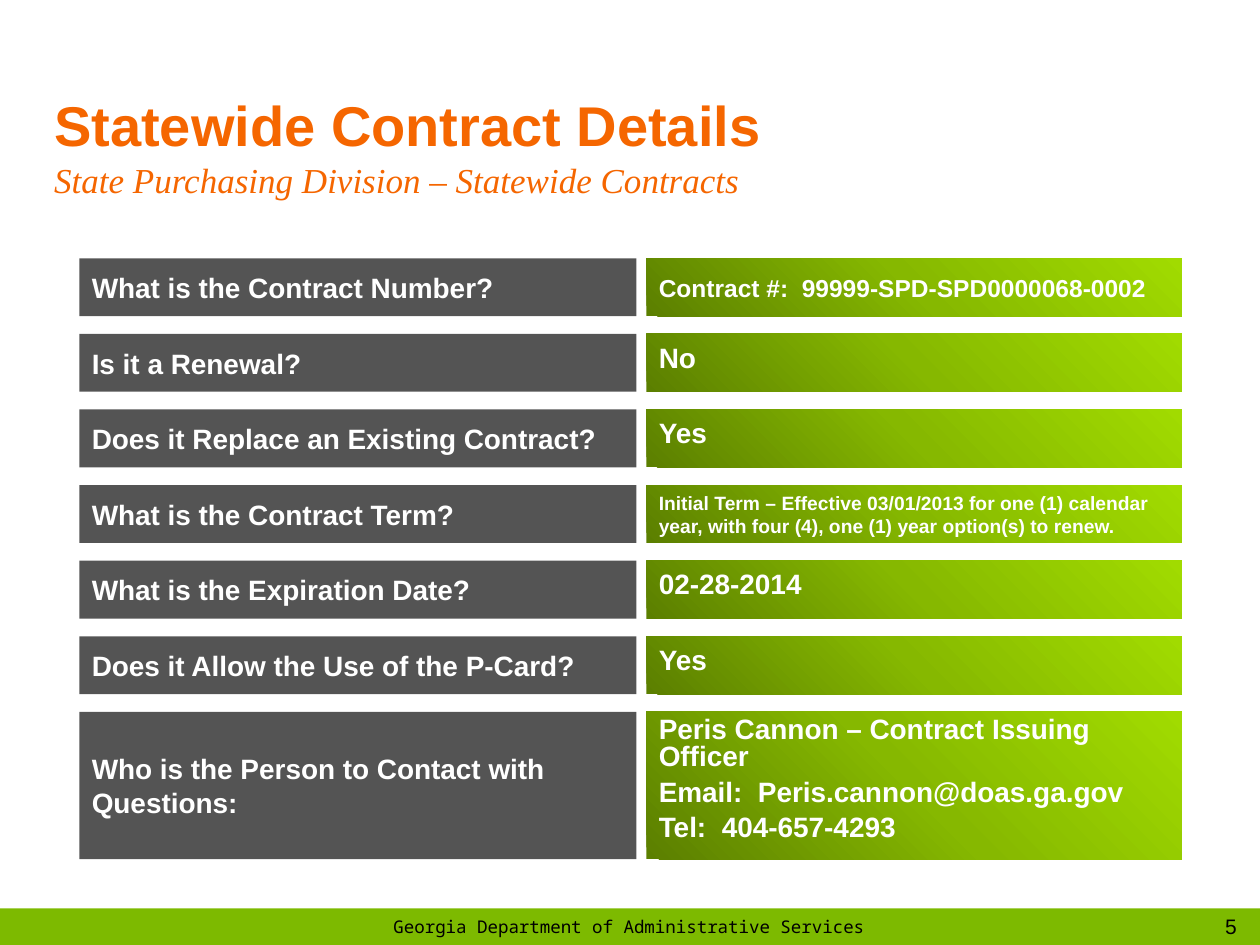
from lxml.etree import SubElement
from pptx import Presentation
from pptx.dml.color import RGBColor
from pptx.enum.shapes import MSO_SHAPE
from pptx.enum.text import MSO_ANCHOR, MSO_AUTO_SIZE, PP_ALIGN
from pptx.oxml import parse_xml
from pptx.oxml.ns import nsdecls, qn
from pptx.util import Inches, Pt

ORANGE = RGBColor(0xF5, 0x66, 0x00)
GREEN = RGBColor(0x7D, 0xBA, 0x00)
BLACK = RGBColor(0x00, 0x00, 0x00)
WHITE = RGBColor(0xFF, 0xFF, 0xFF)
GRADIENT = [(0, RGBColor(0x5B, 0x7F, 0x00)), (50, RGBColor(0x86, 0xB8, 0x00)),
            (100, RGBColor(0xA1, 0xDB, 0x00))]

TITLE = "Statewide Contract Details"
SUBTITLE = "State Purchasing Division – Statewide Contracts"
FOOTER = "Georgia Department of Administrative Services"
PAGE = "5"
DETAILS = [
    ("What is the Contract Number?", ["Contract #:  99999-SPD-SPD0000068-0002"],
     {"size": 14, "anchor": MSO_ANCHOR.MIDDLE}),
    ("Is it a Renewal?", ["No"], {}),
    ("Does it Replace an Existing Contract?", ["Yes"], {}),
    ("What is the Contract Term?",
     ["Initial Term – Effective 03/01/2013 for one (1) calendar year, "
      "with four (4), one (1) year option(s) to renew."], {"size": 11}),
    ("What is the Expiration Date?", ["02-28-2014"], {}),
    ("Does it Allow the Use of the P-Card?", ["Yes"], {}),
    ("Who is the Person to Contact with Questions:",
     ["Peris Cannon – Contract Issuing Officer",
      "Email:  Peris.cannon@doas.ga.gov", "Tel:  404-657-4293"],
     {"line_spacing": 0.8, "space_after": 5}),
]

QUESTION_LEFT, QUESTION_WIDTH = 0.63, 4.42
ANSWER_LEFT, ANSWER_WIDTH = 5.13, 4.25
FIRST_TOP, ROW_PITCH = 2.05, 0.6
ROW_HEIGHT, CONTACT_HEIGHT = 0.46, 1.17


def style_run(run, size, color, font="Arial", bold=False, italic=False):
    run.font.name = font
    run.font.size = Pt(size)
    run.font.bold = bold
    run.font.italic = italic
    run.font.color.rgb = color


def write_text(shape, lines, size=16, color=WHITE, font="Arial", bold=True,
               align=PP_ALIGN.LEFT, anchor=MSO_ANCHOR.TOP,
               line_spacing=None, space_after=None):
    frame = shape.text_frame
    frame.word_wrap = True
    frame.vertical_anchor = anchor
    for index, line in enumerate(lines):
        paragraph = frame.add_paragraph() if index else frame.paragraphs[0]
        paragraph.alignment = align
        if line_spacing:
            paragraph.line_spacing = line_spacing
        if space_after:
            paragraph.space_after = Pt(space_after)
        run = paragraph.add_run()
        run.text = line
        style_run(run, size, color, font, bold)


def add_box(slide, left, top, width, height, color):
    shape = slide.shapes.add_shape(MSO_SHAPE.RECTANGLE, Inches(left), Inches(top),
                                   Inches(width), Inches(height))
    shape.shadow.inherit = False
    shape.line.fill.background()
    shape.fill.solid()
    shape.fill.fore_color.rgb = color
    return shape


def set_opacity(shape, percent):
    color = shape.element.spPr.find(qn("a:solidFill"))[0]
    SubElement(color, qn("a:alpha")).set("val", str(percent * 1000))


def set_gradient(shape, stops, angle):
    stop_xml = "".join(
        f'<a:gs pos="{position * 1000}"><a:srgbClr val="{color}"/></a:gs>'
        for position, color in stops)
    gradient = parse_xml(
        f'<a:gradFill {nsdecls("a")} rotWithShape="1"><a:gsLst>{stop_xml}</a:gsLst>'
        f'<a:lin ang="{angle * 60000}" scaled="1"/></a:gradFill>')
    properties = shape.element.spPr
    properties.replace(properties.find(qn("a:solidFill")), gradient)


def add_title(slide):
    title = slide.shapes.title
    title.left, title.top = Inches(0.33), Inches(0.74)
    title.width, title.height = Inches(8.24), Inches(0.83)
    write_text(title, [TITLE], size=32, color=ORANGE, anchor=MSO_ANCHOR.MIDDLE)
    title.text_frame.auto_size = MSO_AUTO_SIZE.NONE
    paragraph = title.text_frame.paragraphs[0]
    paragraph.line_spacing = 1.0
    paragraph.add_line_break()
    run = paragraph.add_run()
    run.text = SUBTITLE
    style_run(run, 20, ORANGE, "Times New Roman", italic=True)


def add_footer(slide):
    add_box(slide, 0, 7.21, 10, 0.29, GREEN)
    for text, left, top, width, height, size, font in [
            (PAGE, 9.54, 7.2, 0.46, 0.3, 12, "Arial"),
            (FOOTER, 2.99, 7.22, 4, 0.28, 10, "Noto Sans Mono")]:
        box = slide.shapes.add_textbox(Inches(left), Inches(top),
                                       Inches(width), Inches(height))
        write_text(box, [text], size=size, color=BLACK, font=font, bold=False,
                   align=PP_ALIGN.CENTER)


def add_details(slide):
    for index, (question, answer, answer_format) in enumerate(DETAILS):
        top = FIRST_TOP + index * ROW_PITCH
        height = CONTACT_HEIGHT if index == len(DETAILS) - 1 else ROW_HEIGHT
        question_box = add_box(slide, QUESTION_LEFT, top, QUESTION_WIDTH, height, BLACK)
        set_opacity(question_box, 67)
        write_text(question_box, [question], anchor=MSO_ANCHOR.MIDDLE)
        answer_box = add_box(slide, ANSWER_LEFT, top, ANSWER_WIDTH, height, GREEN)
        set_gradient(answer_box, GRADIENT, 315)
        write_text(answer_box, answer, **answer_format)


def main():
    presentation = Presentation()
    presentation.slide_width, presentation.slide_height = Inches(10), Inches(7.5)
    slide = presentation.slides.add_slide(presentation.slide_layouts[5])
    add_footer(slide)
    add_details(slide)
    add_title(slide)
    presentation.save("out.pptx")


if __name__ == "__main__":
    main()
